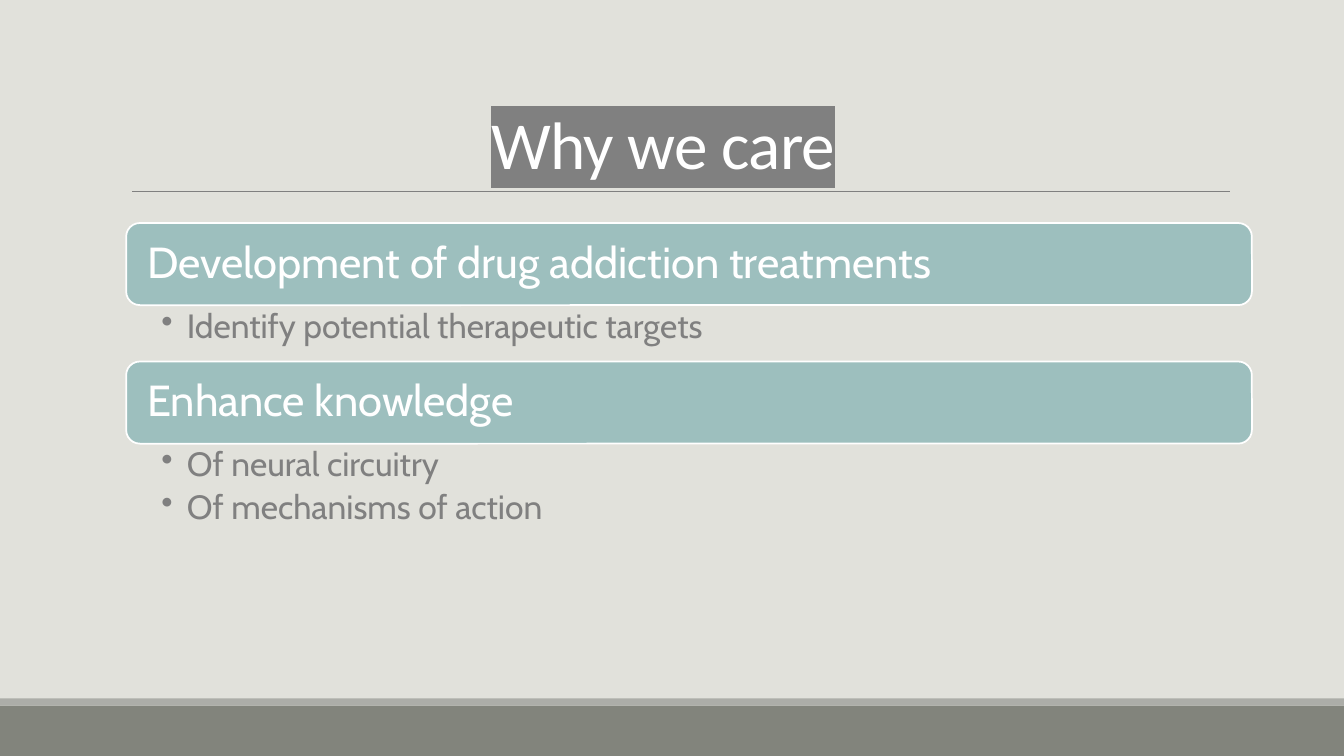
from lxml.etree import SubElement
from pptx import Presentation
from pptx.dml.color import RGBColor
from pptx.enum.shapes import MSO_CONNECTOR as Link, MSO_SHAPE as Kind
from pptx.enum.text import MSO_ANCHOR as Anchor, MSO_AUTO_SIZE as Fit, PP_ALIGN as Align
from pptx.oxml import parse_xml
from pptx.oxml.ns import nsdecls, qn
from pptx.util import Cm, Pt


def paint(part, color):
    part.solid()
    part.fore_color.rgb = RGBColor.from_string(color)


def style(para, font, size, color, lead):
    para.alignment = Align.LEFT
    para.line_spacing = lead
    for run in para.runs:
        run.font.name = font
        run.font.size = Pt(size)
        paint(run.font.fill, color)


deck = Presentation()
deck.slide_width, deck.slide_height = Cm(33.87), Cm(19.05)
slide = deck.slides.add_slide(deck.slide_layouts[5])
paint(slide.background.fill, "E1E1DB")
shapes = slide.shapes

# Footer bands
for top, height, color in [(17.78, 1.27, "82847C"), (17.6, 0.18, "ACADA8")]:
    band = shapes.add_shape(Kind.RECTANGLE, 0, Cm(top), deck.slide_width, Cm(height))
    band.shadow.inherit = False
    paint(band.fill, color)
    band.line.fill.background()

# Title and the rule below it
rule = shapes.add_connector(Link.STRAIGHT, Cm(3.33), Cm(4.82), Cm(31), Cm(4.82))
paint(rule.line.fill, "808080")
rule.line.width = Pt(0.5)
SubElement(rule._element.spPr, qn("a:effectLst"))

title = shapes.title
title.left, title.top, title.width, title.height = Cm(12.12), Cm(0.74), Cm(9.65), Cm(4.01)
frame = title.text_frame
frame.text = "Why we care"
frame.auto_size = Fit.NONE
frame.vertical_anchor = Anchor.BOTTOM
style(frame.paragraphs[0], "Calibri", 48, "FFFFFF", 0.85)
props = frame.paragraphs[0].runs[0].font._element
props.set("spc", "-50")
props.insert(1, parse_xml(
    f'<a:highlight {nsdecls("a")}><a:srgbClr val="808080"/></a:highlight>'))

# Headings, each followed by its bullets
left, width, bar = Cm(3.18), Cm(28.37), Cm(2.07)
groups = [
    (5.62, 1.42, "Development of drug addiction treatments",
     ["Identify potential therapeutic targets"]),
    (9.11, 2.24, "Enhance knowledge",
     ["Of neural circuitry", "Of mechanisms of action"]),
]
for top, height, head, points in groups:
    box = shapes.add_shape(Kind.ROUNDED_RECTANGLE, left, Cm(top), width, bar)
    box.shadow.inherit = False
    paint(box.fill, "9DBFBE")
    paint(box.line.fill, "FFFFFF")
    box.line.width = Pt(1.25)
    frame = box.text_frame
    frame.text = head
    frame.margin_left = frame.margin_right = Cm(0.43)
    frame.vertical_anchor = Anchor.MIDDLE
    style(frame.paragraphs[0], "Cabin", 31, "FFFFFF", 0.9)

    body = shapes.add_textbox(left, Cm(top) + bar, width, Cm(height))
    frame = body.text_frame
    frame.word_wrap = True
    frame.margin_left, frame.margin_right = Cm(0.89), Cm(0.61)
    frame.margin_top = frame.margin_bottom = Cm(0.1)
    frame.text = "\n".join(points)
    for para in frame.paragraphs:
        indent = para._p.get_or_add_pPr()
        indent.set("marL", str(Cm(0.64)))
        indent.set("indent", str(-Cm(0.64)))
        SubElement(indent, qn("a:buChar"), char="•")
        para.space_after = Pt(4.8)
        style(para, "Cabin", 24, "808080", 0.9)

deck.save("out.pptx")
